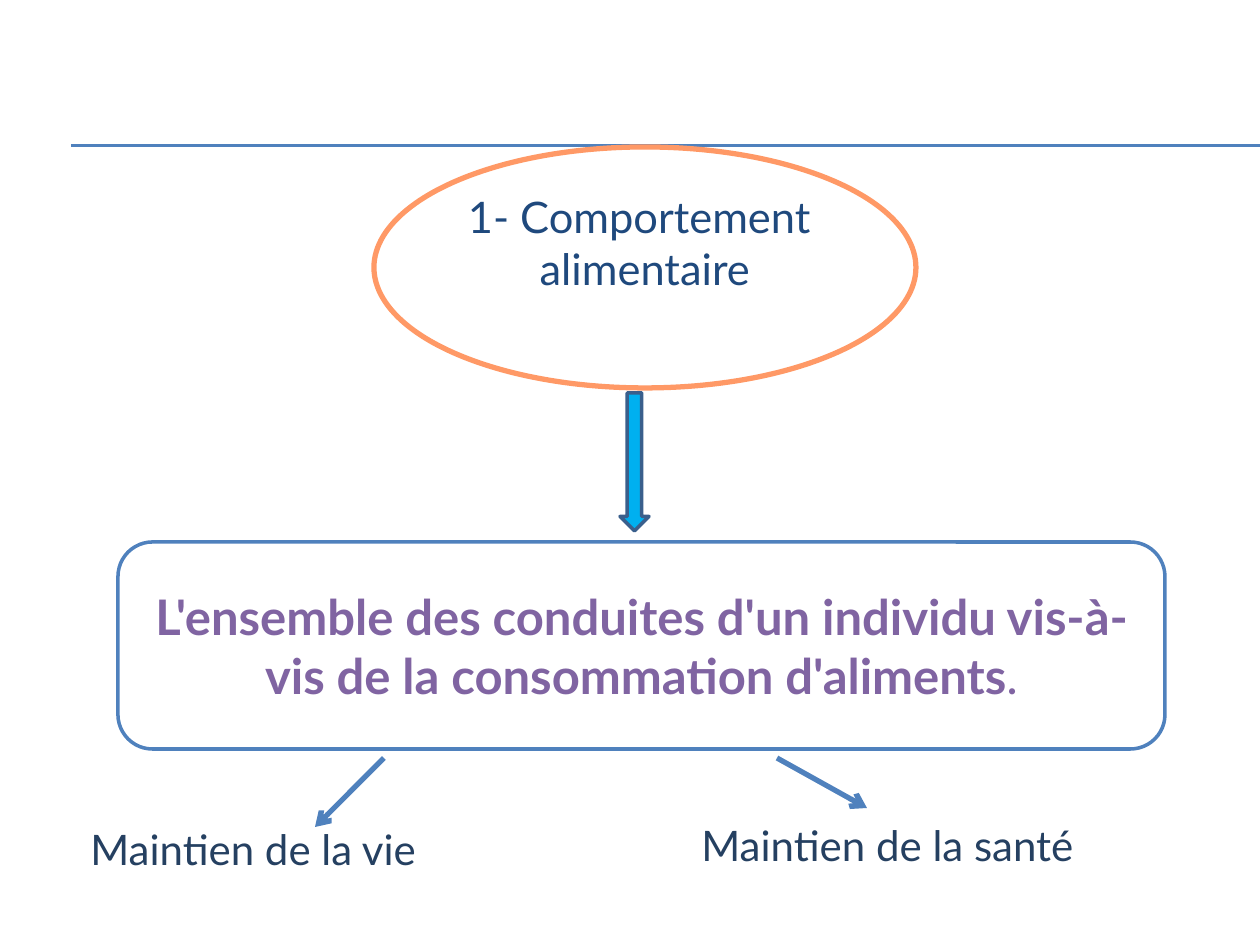
"""Build a slide that defines eating behaviour and its two purposes."""
from dataclasses import dataclass
from typing import Optional

from lxml import etree
from pptx import Presentation
from pptx.dml.color import RGBColor
from pptx.enum.shapes import MSO_CONNECTOR, MSO_SHAPE
from pptx.enum.text import MSO_ANCHOR, PP_ALIGN
from pptx.oxml.ns import qn
from pptx.util import Pt

STRAIGHT = MSO_CONNECTOR.STRAIGHT
ELLIPSE = MSO_SHAPE.OVAL
ROUNDED = MSO_SHAPE.ROUNDED_RECTANGLE
DOWN_ARROW = MSO_SHAPE.DOWN_ARROW
TOP, MIDDLE = MSO_ANCHOR.TOP, MSO_ANCHOR.MIDDLE
CENTER, LEFT = PP_ALIGN.CENTER, PP_ALIGN.LEFT
EMU_PER_PX = 914400 / 126
BLANK_LAYOUT = 6


@dataclass(frozen=True)
class Theme:
    font: str = "Lato"
    blue: str = "4F81BD"
    orange: str = "FF9966"
    white: str = "FFFFFF"
    arrow_fill: str = "00B0F0"
    arrow_line: str = "3A5F8C"
    topic_text: str = "1F497D"
    definition_text: str = "8064A2"
    purpose_text: str = "254061"
    topic_size: float = 24.8
    definition_size: float = 28
    purpose_size: float = 24
    rule_width: float = 0.75
    outline_width: float = 2
    accent_width: float = 3


@dataclass(frozen=True)
class Box:
    left: int
    top: int
    width: int
    height: int


@dataclass(frozen=True)
class Segment:
    x1: int
    y1: int
    x2: int
    y2: int


@dataclass(frozen=True)
class Purpose:
    label: str
    box: Box
    arrow: Segment


THEME = Theme()
RULES = [Segment(71, y, 1260, y) for y in (145, 146)]
TOPIC_BOX = Box(374, 147, 542, 241)
DOWN_BOX = Box(620, 393, 29, 138)
DEFINITION_BOX = Box(118, 542, 1047, 207)
TOPIC_LINES = ("1- Comportement ", "alimentaire")
DEFINITION = ("L'ensemble des conduites d'un individu vis-à-vis "
              "de la consommation d'aliments")
PURPOSES = [
    Purpose("Maintien de la vie", Box(78, 817, 403, 63),
            Segment(384, 758, 315, 827)),
    Purpose("Maintien de la santé", Box(689, 813, 423, 63),
            Segment(777, 758, 867, 808)),
]


def px(length: int) -> int:
    return round(length * EMU_PER_PX)


def frame(box: Box) -> tuple[int, int, int, int]:
    return px(box.left), px(box.top), px(box.width), px(box.height)


def style_line(line, color: str, width: float) -> None:
    line.color.rgb = RGBColor.from_string(color)
    line.width = Pt(width)


def style_text(paragraph, color: str, size: float, align=CENTER) -> None:
    paragraph.alignment = align
    paragraph.font.name = THEME.font
    paragraph.font.size = Pt(size)
    paragraph.font.color.rgb = RGBColor.from_string(color)


def draw_segment(slide, segment: Segment, width: float, arrow: bool = False) -> None:
    connector = slide.shapes.add_connector(
        STRAIGHT, px(segment.x1), px(segment.y1), px(segment.x2), px(segment.y2))
    style_line(connector.line, THEME.blue, width)
    if arrow:
        outline = connector.line._get_or_add_ln()
        etree.SubElement(outline, qn("a:tailEnd"), type="arrow")
    etree.SubElement(connector._element.spPr, qn("a:effectLst"))


def draw_shape(slide, kind, box: Box, fill: Optional[str], line: str, width: float):
    shape = slide.shapes.add_shape(kind, *frame(box))
    shape.shadow.inherit = False
    if fill:
        shape.fill.solid()
        shape.fill.fore_color.rgb = RGBColor.from_string(fill)
    else:
        shape.fill.background()
    style_line(shape.line, line, width)
    return shape


def draw_definition(slide) -> None:
    panel = draw_shape(slide, ROUNDED, DEFINITION_BOX, THEME.white,
                       THEME.blue, THEME.outline_width)
    panel.text_frame.word_wrap = True
    panel.text_frame.vertical_anchor = MIDDLE
    sentence = panel.text_frame.paragraphs[0]
    style_text(sentence, THEME.definition_text, THEME.definition_size)
    for text, bold in ((DEFINITION, True), (".", False)):
        part = sentence.add_run()
        part.text = text
        part.font.bold = bold


def draw_topic(slide) -> None:
    topic = draw_shape(slide, ELLIPSE, TOPIC_BOX, None,
                       THEME.orange, THEME.accent_width)
    body = topic.text_frame
    body.word_wrap = False
    body.vertical_anchor = TOP
    body.margin_top = px(8)
    body.text = "\n".join(TOPIC_LINES)
    for paragraph in body.paragraphs:
        style_text(paragraph, THEME.topic_text, THEME.topic_size)


def draw_purpose(slide, purpose: Purpose) -> None:
    label = slide.shapes.add_textbox(*frame(purpose.box))
    label.text_frame.word_wrap = True
    label.text_frame.text = purpose.label
    style_text(label.text_frame.paragraphs[0], THEME.purpose_text,
               THEME.purpose_size, LEFT)
    draw_segment(slide, purpose.arrow, THEME.accent_width, arrow=True)


def main() -> None:
    deck = Presentation()
    deck.slide_width, deck.slide_height = px(1260), px(945)
    slide = deck.slides.add_slide(deck.slide_layouts[BLANK_LAYOUT])
    for rule in RULES:
        draw_segment(slide, rule, THEME.rule_width)
    draw_definition(slide)
    draw_topic(slide)
    draw_shape(slide, DOWN_ARROW, DOWN_BOX, THEME.arrow_fill,
               THEME.arrow_line, THEME.outline_width)
    for purpose in PURPOSES:
        draw_purpose(slide, purpose)
    deck.save("out.pptx")


if __name__ == "__main__":
    main()
